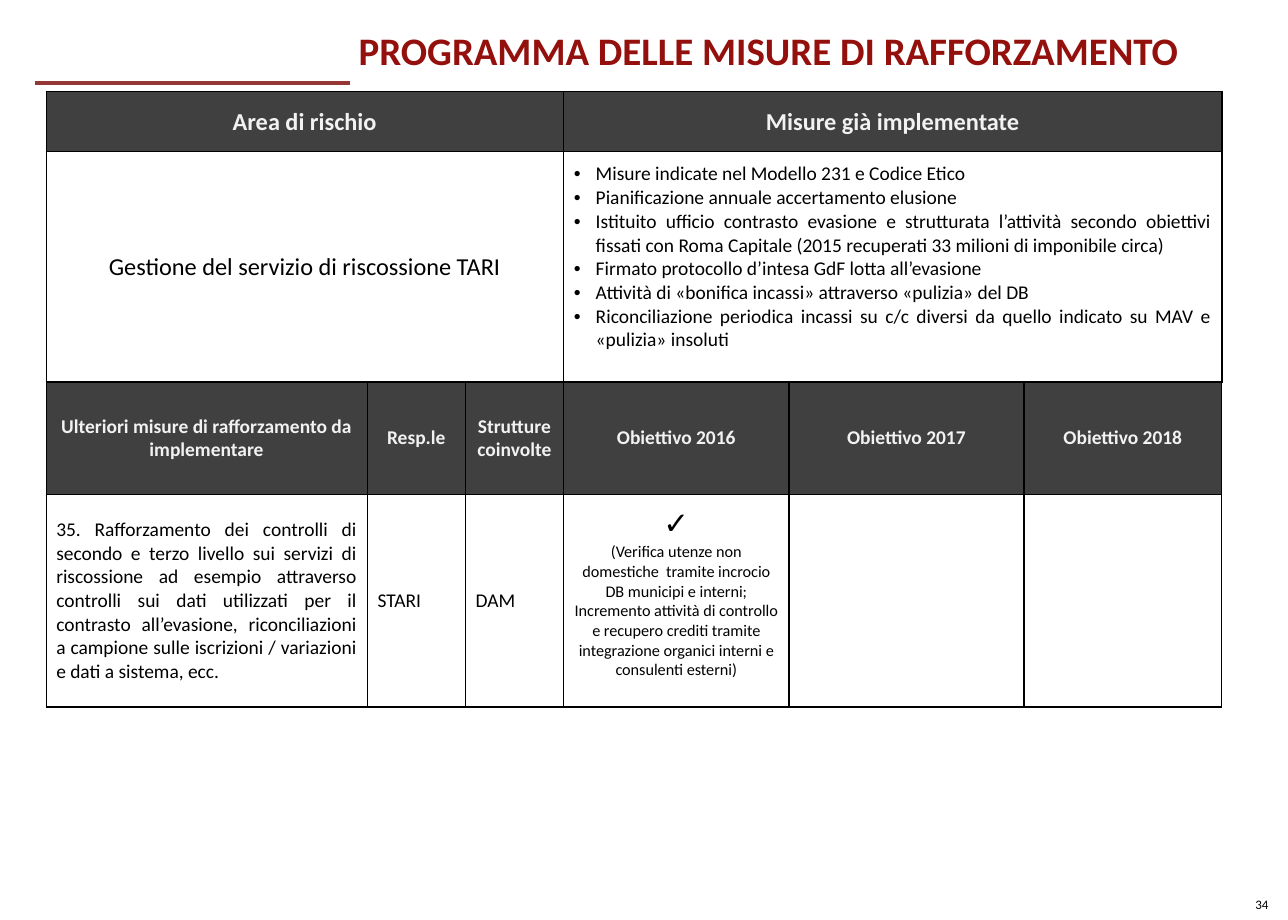
from dataclasses import dataclass

from lxml.etree import SubElement
from pptx import Presentation
from pptx.dml.color import RGBColor
from pptx.enum.shapes import MSO_CONNECTOR as Link
from pptx.enum.text import MSO_ANCHOR as Anchor, MSO_AUTO_SIZE as Fit, PP_ALIGN as Align
from pptx.oxml.ns import qn
from pptx.slide import Slide
from pptx.table import Table, _Cell as Cell
from pptx.util import Pt

FONT = "Calibri"
BLACK, DARK, LIGHT, RED, RUST = "000000", "404040", "F2F2F2", "93100D", "953735"
COLS = (198, 60.5, 60.5, 139, 144.75, 122)
ROWS = (37, 142, 69.5, 131)


@dataclass
class Line:
    text: str
    size: float = 12
    align: Align = Align.CENTER
    bullet: bool = False


@dataclass
class Box:
    row: int
    col: int
    lines: list[Line]
    span: int = 1
    head: bool = False
    pad: float = 5.76
    foot: float = 5.76
    side: float = 6.4


def tint(code: str) -> RGBColor:
    return RGBColor.from_string(code)


def style(para, size: float, color: str, bold: bool = False) -> None:
    font = para.font
    font.name, font.size, font.bold = FONT, Pt(size), bold
    font.color.rgb = tint(color)


def dot(para) -> None:
    props = para._p.get_or_add_pPr()
    props.set("marL", str(Pt(13.5)))
    props.set("indent", str(-Pt(13.5)))
    SubElement(props, qn("a:buFont"), typeface="Arial")
    SubElement(props, qn("a:buChar"), char="•")


def edge(cell: Cell, row: int, col: int) -> None:
    props = cell._tc.get_or_add_tcPr()
    thin = {"L": col == 0, "R": col == len(COLS) - 1 and row > 1}
    for side in "LRTB":
        width = Pt(0.5 if thin.get(side) else 1)
        line = SubElement(props, qn(f"a:ln{side}"), w=str(width))
        fill = SubElement(line, qn("a:solidFill"))
        SubElement(fill, qn("a:srgbClr"), val=BLACK)


def fill_box(grid: Table, box: Box) -> None:
    cell = grid.cell(box.row, box.col)
    if box.span > 1:
        cell.merge(grid.cell(box.row, box.col + box.span - 1))
    cell.vertical_anchor = Anchor.MIDDLE
    cell.margin_left = cell.margin_right = Pt(box.side)
    cell.margin_top, cell.margin_bottom = Pt(box.pad), Pt(box.foot)
    if box.head:
        cell.fill.solid()
        cell.fill.fore_color.rgb = tint(DARK)
    frame = cell.text_frame
    for i, line in enumerate(box.lines):
        para = frame.add_paragraph() if i else frame.paragraphs[0]
        para.text, para.alignment = line.text, line.align
        if line.bullet:
            dot(para)
        style(para, line.size, LIGHT if box.head else BLACK, box.head)


def add_grid(slide: Slide, boxes: list[Box]) -> None:
    frame = slide.shapes.add_table(
        len(ROWS), len(COLS), Pt(28.3), Pt(56.5), Pt(sum(COLS)), Pt(sum(ROWS)))
    grid = frame.table
    grid.first_row = grid.horz_banding = False
    for col, width in zip(grid.columns, COLS):
        col.width = Pt(width)
    for row, height in zip(grid.rows, ROWS):
        row.height = Pt(height)
    for r in range(len(ROWS)):
        for c in range(len(COLS)):
            edge(grid.cell(r, c), r, c)
            grid.cell(r, c).fill.background()
    for box in boxes:
        fill_box(grid, box)


def add_title(slide: Slide) -> None:
    title = slide.shapes.title
    title.left, title.top, title.width, title.height = Pt(221), Pt(15.1), Pt(568), Pt(42.5)
    frame = title.text_frame
    frame.auto_size, frame.vertical_anchor = Fit.NONE, Anchor.TOP
    frame.margin_left = frame.margin_right = frame.margin_top = frame.margin_bottom = 0
    para = frame.paragraphs[0]
    para.text, para.alignment = "PROGRAMMA DELLE MISURE DI RAFFORZAMENTO", Align.LEFT
    para.line_spacing, para.space_after = Pt(30), Pt(6)
    style(para, 24, RED, True)


def add_rule(slide: Slide) -> None:
    rule = slide.shapes.add_connector(Link.STRAIGHT, Pt(21.6), Pt(51.1), Pt(215.5), Pt(51.1))
    rule.line.color.rgb, rule.line.width = tint(RUST), Pt(2.25)
    SubElement(rule._element.spPr, qn("a:effectLst"))


def add_page(slide: Slide) -> None:
    frame = slide.shapes.add_textbox(Pt(766.6), Pt(549.1), Pt(25.2), Pt(17.3)).text_frame
    frame.word_wrap = False
    frame.paragraphs[0].text = "34"
    style(frame.paragraphs[0], 8, BLACK)


def main() -> None:
    """Build the slide on the risk area and its planned measures."""
    deck = Presentation()
    deck.slide_width, deck.slide_height = Pt(793.75), Pt(567.25)
    slide = deck.slides.add_slide(deck.slide_layouts[5])
    done = (
        "Misure indicate nel Modello 231 e Codice Etico",
        "Pianificazione annuale accertamento elusione",
        "Istituito ufficio contrasto evasione e strutturata l’attività secondo obiettivi "
        "fissati con Roma Capitale (2015 recuperati 33 milioni di imponibile circa)",
        "Firmato protocollo d’intesa GdF lotta all’evasione",
        "Attività di «bonifica incassi» attraverso «pulizia» del DB",
        "Riconciliazione periodica incassi su c/c diversi da quello indicato su MAV e "
        "«pulizia» insoluti",
    )
    heads = ("Ulteriori misure di rafforzamento da implementare", "Resp.le",
             "Strutture coinvolte", "Obiettivo 2016", "Obiettivo 2017", "Obiettivo 2018")
    plan = ("35. Rafforzamento dei controlli di secondo e terzo livello sui servizi di "
            "riscossione ad esempio attraverso controlli sui dati utilizzati per il "
            "contrasto all’evasione, riconciliazioni a campione sulle iscrizioni / "
            "variazioni e dati a sistema, ecc.")
    goal = [
        Line("✓", 19),
        Line("(Verifica utenze non domestiche  tramite incrocio DB municipi e interni;", 10),
        Line("Incremento attività di controllo e recupero crediti tramite "
             "integrazione organici interni e consulenti esterni)", 10),
    ]
    tops = ((0, "Area di rischio"), (3, "Misure già implementate"))
    boxes = [Box(0, col, [Line(text, 15)], 3, True, 0.7, 0, 0.7) for col, text in tops]
    boxes += [
        Box(1, 0, [Line("Gestione del servizio di riscossione TARI", 15)], 3),
        Box(1, 3, [Line(text, 12, Align.JUSTIFY, True) for text in done], 3, foot=17.5),
    ]
    boxes += [Box(2, col, [Line(text)], head=True) for col, text in enumerate(heads)]
    boxes += [
        Box(3, 0, [Line(plan, align=Align.JUSTIFY)]),
        Box(3, 1, [Line("STARI", align=Align.LEFT)]),
        Box(3, 2, [Line("DAM", align=Align.LEFT)]),
        Box(3, 3, goal, foot=16),
    ]
    add_rule(slide)
    add_page(slide)
    add_grid(slide, boxes)
    add_title(slide)
    deck.save("out.pptx")


if __name__ == "__main__":
    main()
